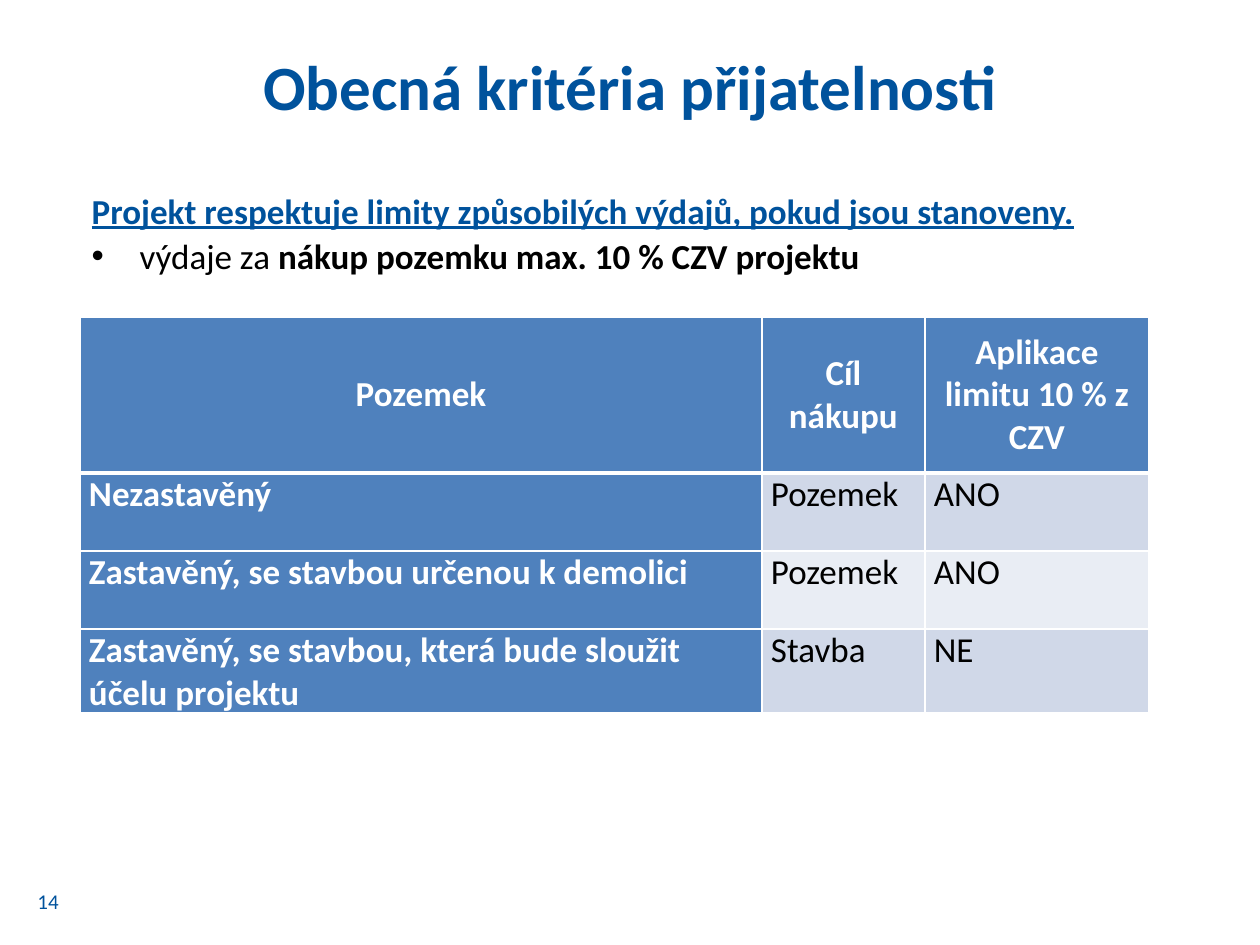
from lxml import etree
from pptx import Presentation
from pptx.dml.color import RGBColor
from pptx.enum.text import MSO_ANCHOR, MSO_AUTO_SIZE, PP_ALIGN
from pptx.oxml.ns import qn
from pptx.util import Pt

LEFT, CENTER, JUSTIFY = PP_ALIGN.LEFT, PP_ALIGN.CENTER, PP_ALIGN.JUSTIFY
TOP, MIDDLE = MSO_ANCHOR.TOP, MSO_ANCHOR.MIDDLE
PX = 914400 // 126

# Content
TITLE = "Obecná kritéria přijatelnosti"
LEAD = "Projekt respektuje limity způsobilých výdajů, pokud jsou stanoveny."
BULLET = [("výdaje za ", False), ("nákup pozemku max. 10 % CZV projektu", True)]
PAGE_NUMBER = "14"
HEADER = ["Pozemek", "Cíl nákupu", "Aplikace limitu 10 % z CZV"]
ROWS = [
    ["Nezastavěný", "Pozemek", "ANO"],
    ["Zastavěný, se stavbou určenou k demolici", "Pozemek", "ANO"],
    ["Zastavěný, se stavbou, která bude sloužit účelu projektu", "Stavba", "NE"],
]

# Places in px: left, top, width, height
SLIDE_SIZE = (1260, 945)
TITLE_BOX = (63, 18, 1134, 135)
BODY_BOX = (79, 134, 1103, 725)
BODY_TOP_INSET = 55
BULLET_INDENT = 48
NUMBER_BOX = (25, 876, 69, 50)
TABLE_ORIGIN = (80, 317)
COLUMN_WIDTHS = [682, 163, 224]
HEADER_HEIGHT, ROW_HEIGHT = 156, 78
CELL_INSET = 9

THEME = {
    "font": "Calibri",
    "blue": "00529C", "black": "000000", "white": "FFFFFF",
    "header": "4F81BD", "bands": ["D0D8E8", "E9EDF4"],
    "title": 36, "text": 20, "number": 12,
    "thin": 1, "thick": 3,
}


def px(*lengths):
    return [length * PX for length in lengths]


def place(shape, box):
    shape.left, shape.top, shape.width, shape.height = px(*box)


def write(paragraph, text, size=THEME["text"], color=THEME["black"],
          bold=False, underline=False, align=LEFT):
    paragraph.alignment = align
    run = paragraph.add_run()
    run.text = text
    font = run.font
    font.name, font.size = THEME["font"], Pt(size)
    font.bold, font.underline = bold, underline
    font.color.rgb = RGBColor.from_string(color)


def set_bullet(paragraph, character=None, indent=0):
    properties = paragraph._p.get_or_add_pPr()
    properties.set("marL", str(indent * PX))
    properties.set("indent", str(-indent * PX))
    if character:
        font = etree.SubElement(properties, qn("a:buFont"))
        font.set("typeface", "Arial")
        etree.SubElement(properties, qn("a:buChar")).set("char", character)
    else:
        etree.SubElement(properties, qn("a:buNone"))


def set_borders(cell, **widths):
    properties = cell._tc.get_or_add_tcPr()
    for side in ("L", "R", "T", "B"):
        line = etree.SubElement(properties, qn(f"a:ln{side}"))
        line.set("w", str(Pt(widths.get(side, THEME["thin"]))))
        fill = etree.SubElement(line, qn("a:solidFill"))
        etree.SubElement(fill, qn("a:srgbClr")).set("val", THEME["white"])


def add_title(slide):
    title = slide.shapes.title
    place(title, TITLE_BOX)
    title.text_frame.auto_size = MSO_AUTO_SIZE.NONE
    title.text_frame.vertical_anchor = MIDDLE
    write(title.text_frame.paragraphs[0], TITLE, size=THEME["title"],
          color=THEME["blue"], bold=True, align=CENTER)


def add_body(slide):
    body = slide.placeholders[1]
    place(body, BODY_BOX)
    frame = body.text_frame
    frame.auto_size = MSO_AUTO_SIZE.NONE
    frame.vertical_anchor = TOP
    frame.margin_top = BODY_TOP_INSET * PX
    lead, item = frame.paragraphs[0], frame.add_paragraph()
    set_bullet(lead)
    set_bullet(item, "•", BULLET_INDENT)
    lead.space_before = item.space_before = Pt(0)
    lead.space_after = Pt(2)
    write(lead, LEAD, color=THEME["blue"], bold=True, underline=True)
    for text, bold in BULLET:
        write(item, text, bold=bold, align=JUSTIFY)


def add_limits_table(slide):
    heights = [HEADER_HEIGHT] + [ROW_HEIGHT] * len(ROWS)
    size = (sum(COLUMN_WIDTHS), sum(heights))
    table = slide.shapes.add_table(len(heights), len(COLUMN_WIDTHS),
                                   *px(*TABLE_ORIGIN, *size)).table
    for column, width in zip(table.columns, COLUMN_WIDTHS):
        column.width = width * PX
    for row, height in zip(table.rows, heights):
        row.height = height * PX
    for r, texts in enumerate([HEADER] + ROWS):
        for c, text in enumerate(texts):
            cell = table.cell(r, c)
            is_header = r == 0
            strong = is_header or c == 0
            cell.margin_left = cell.margin_right = CELL_INSET * PX
            cell.margin_top = cell.margin_bottom = 0
            cell.vertical_anchor = MIDDLE if is_header else TOP
            set_borders(cell, B=THEME["thick" if is_header else "thin"],
                        T=THEME["thick" if r == 1 else "thin"])
            cell.fill.solid()
            cell.fill.fore_color.rgb = RGBColor.from_string(
                THEME["header"] if strong else THEME["bands"][(r - 1) % 2])
            write(cell.text_frame.paragraphs[0], text, bold=strong,
                  color=THEME["white" if strong else "black"],
                  align=CENTER if is_header else LEFT)


def add_page_number(slide):
    frame = slide.shapes.add_textbox(*px(*NUMBER_BOX)).text_frame
    frame.word_wrap = True
    frame.vertical_anchor = MIDDLE
    write(frame.paragraphs[0], PAGE_NUMBER, size=THEME["number"],
          color=THEME["blue"])


def main():
    presentation = Presentation()
    presentation.slide_width, presentation.slide_height = px(*SLIDE_SIZE)
    slide = presentation.slides.add_slide(presentation.slide_layouts[1])
    add_body(slide)
    add_title(slide)
    add_page_number(slide)
    add_limits_table(slide)
    presentation.save("out.pptx")


if __name__ == "__main__":
    main()
